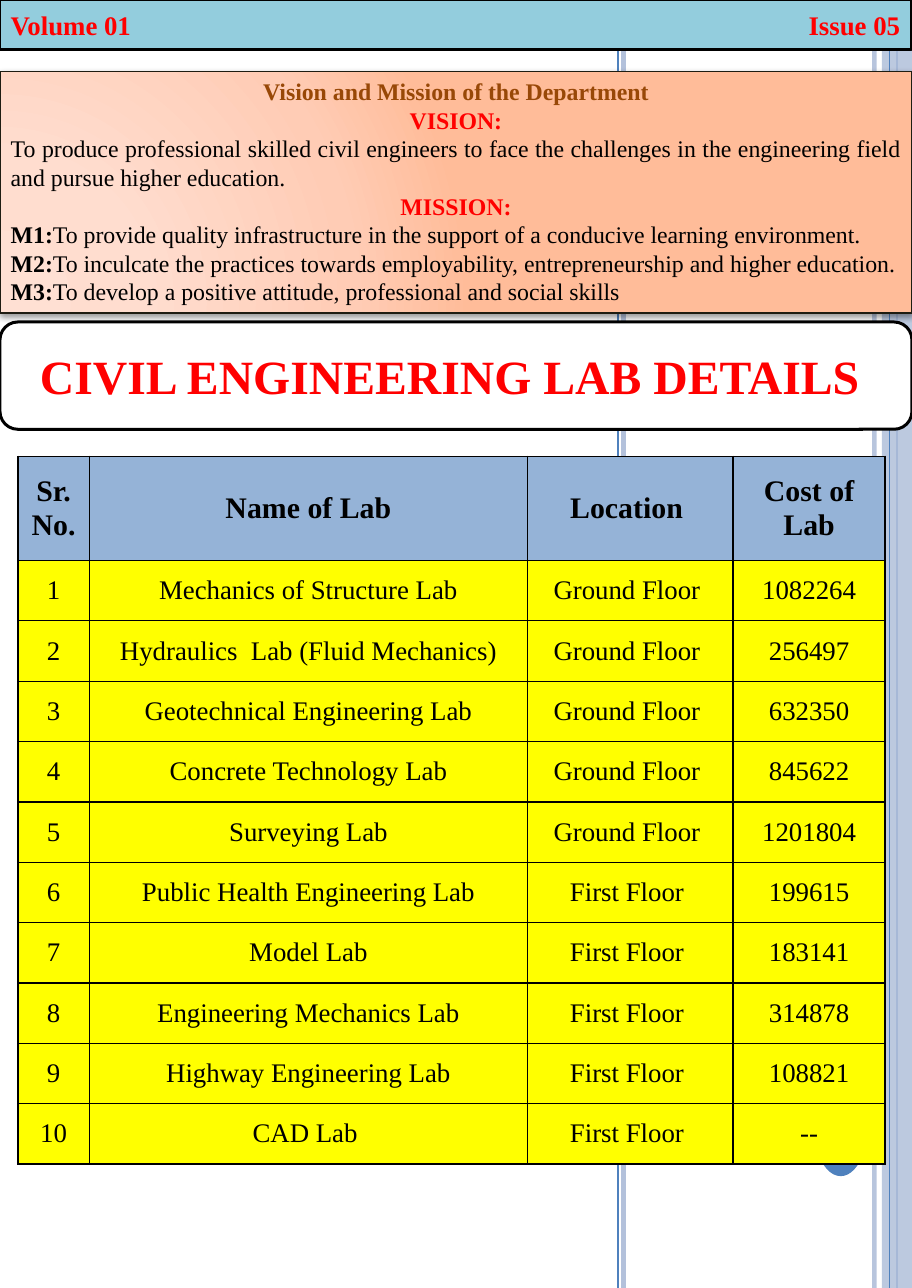
from dataclasses import dataclass

from lxml import etree
from pptx import Presentation
from pptx import util as u
from pptx.dml.color import RGBColor
from pptx.enum import shapes, text
from pptx.oxml import ns

WIDTH, HEIGHT = 612, 864
CENTER, JUSTIFY, LEFT = text.PP_ALIGN.CENTER, text.PP_ALIGN.JUSTIFY, text.PP_ALIGN.LEFT
MIDDLE, TOP = text.MSO_ANCHOR.MIDDLE, text.MSO_ANCHOR.TOP


@dataclass(frozen=True)
class Theme:
    font: str = "Times New Roman"
    black: str = "000000"
    white: str = "FFFFFF"
    red: str = "FF0000"
    brown: str = "984807"
    blue: str = "4F81BD"
    pale_blue: str = "B3C1DB"
    banner: str = "93CDDD"
    panel_line: str = "1E1C11"
    title_outline: str = "5E457C"
    head_fill: str = "95B3D7"
    row_fill: str = "FFFF00"
    panel_stops: tuple = ((0, "FFE0D3"), (30, "FFDDCF"), (75, "FFCCB5"), (100, "FFBC99"))
    body_size: int = 16
    row_size: int = 18
    head_size: int = 20
    title_size: int = 32


def add_xml(parent, tag, **attributes):
    """Append a DrawingML element and return it."""
    names = {key: str(value) for key, value in attributes.items()}
    return etree.SubElement(parent, ns.qn("a:" + tag), names)


def add_solid(parent, color):
    add_xml(add_xml(parent, "solidFill"), "srgbClr", val=color)


def add_span(para, content, font, size, color, bold=False, outline=None):
    """Add one formatted run to a paragraph."""
    span = para.add_run()
    span.text = content
    span.font.name, span.font.size, span.font.bold = font, u.Pt(size), bold
    span.font.color.rgb = RGBColor.from_string(color)
    if outline:
        properties = span._r.get_or_add_rPr()
        line = add_xml(properties, "ln", w=u.Pt(0.71))
        add_solid(line, outline)
        properties.insert(0, line)
    return span


class Page:
    def __init__(self, slide, theme):
        self.slide, self.theme = slide, theme

    def place(self, box, left, top, width, height):
        box.left, box.top = u.Pt(left), u.Pt(top)
        box.width, box.height = u.Pt(width), u.Pt(height)

    def set_alpha(self, element, percent):
        color = element.find(".//" + ns.qn("a:srgbClr"))
        add_xml(color, "alpha", val=percent * 1000)

    def rule(self, x, color, weight, alpha=100):
        """Full-height vertical line."""
        line = self.slide.shapes.add_connector(
            shapes.MSO_CONNECTOR.STRAIGHT, u.Pt(x), u.Pt(0), u.Pt(x), u.Pt(HEIGHT))
        line.line.color.rgb = RGBColor.from_string(color)
        line.line.width = u.Pt(weight)
        properties = line.element.spPr
        if alpha < 100:
            self.set_alpha(properties, alpha)
        add_xml(properties, "effectLst")

    def shape(self, kind, frame, fill, line=None, alpha=100):
        box = self.slide.shapes.add_shape(kind, *map(u.Pt, frame))
        box.shadow.inherit = False
        box.fill.solid()
        box.fill.fore_color.rgb = RGBColor.from_string(fill)
        if alpha < 100:
            self.set_alpha(box.element.spPr, alpha)
        if line:
            box.line.color.rgb = RGBColor.from_string(line)
            box.line.width = u.Pt(2)
        else:
            box.line.fill.background()
        return box

    def set_text(self, frame, paragraphs, anchor=MIDDLE):
        """Fill a text frame from (alignment, [(text, format), ...]) pairs."""
        frame.word_wrap, frame.vertical_anchor = True, anchor
        for index, (align, spans) in enumerate(paragraphs):
            para = frame.add_paragraph() if index else frame.paragraphs[0]
            para.alignment = align
            para.space_before = u.Pt(0)
            for content, style in spans:
                add_span(para, content, **{"font": self.theme.font, **style})

    def placeholder(self, index, frame, paragraphs, anchor):
        """Use a template placeholder, above everything drawn so far."""
        box = self.slide.placeholders[index]
        self.place(box, *frame)
        box.element.getparent().append(box.element)
        self.set_text(box.text_frame, paragraphs, anchor)
        box.text_frame.auto_size = text.MSO_AUTO_SIZE.NONE
        for para in box.text_frame.paragraphs:
            properties = para._p.get_or_add_pPr()
            properties.set("marL", "0")
            properties.set("indent", "0")
            add_xml(properties, "buNone")
        return box

    def panel(self, box):
        """Radial gradient, thin line and soft shadow."""
        properties = box.element.spPr
        add_xml(add_xml(properties, "prstGeom", prst="rect"), "avLst")
        gradient = add_xml(properties, "gradFill", rotWithShape=1)
        stops = add_xml(gradient, "gsLst")
        for position, color in self.theme.panel_stops:
            add_xml(add_xml(stops, "gs", pos=position * 1000), "srgbClr", val=color)
        circle = add_xml(gradient, "path", path="circle")
        add_xml(circle, "fillToRect", l=5000, t=100000, r=120000, b=10000)
        box.line.color.rgb = RGBColor.from_string(self.theme.panel_line)
        box.line.width = u.Pt(1)
        shadow = add_xml(add_xml(properties, "effectLst"), "outerShdw", blurRad=u.Pt(4),
                         dist=u.Pt(2), dir=90 * 60000, rotWithShape=0)
        add_xml(add_xml(shadow, "srgbClr", val=self.theme.black), "alpha", val=40000)

    def table(self, left, top, widths, heights, rows):
        theme = self.theme
        grid = self.slide.shapes.add_table(
            len(rows), len(widths), u.Pt(left), u.Pt(top),
            u.Pt(sum(widths)), u.Pt(sum(heights))).table
        grid.horz_banding = grid.first_row = False
        for column, width in zip(grid.columns, widths):
            column.width = u.Pt(width)
        for r, (values, height) in enumerate(zip(rows, heights)):
            grid.rows[r].height = u.Pt(height)
            style = dict(size=theme.row_size if r else theme.head_size,
                         color=theme.black, bold=r == 0)
            for c, value in enumerate(values):
                cell = grid.cell(r, c)
                self.set_text(cell.text_frame, [(CENTER, [(value, style)])])
                cell.vertical_anchor = MIDDLE
                properties = cell._tc.get_or_add_tcPr()
                for side in ("lnL", "lnR", "lnT", "lnB"):
                    add_solid(add_xml(properties, side, w=u.Pt(1)), theme.black)
                cell.fill.solid()
                cell.fill.fore_color.rgb = RGBColor.from_string(
                    theme.row_fill if r else theme.head_fill)


def main():
    theme = Theme()
    deck = Presentation()
    deck.slide_width, deck.slide_height = u.Pt(WIDTH), u.Pt(HEIGHT)
    page = Page(deck.slides.add_slide(deck.slide_layouts[1]), theme)
    kinds = shapes.MSO_SHAPE

    # Background stripes and dot
    page.rule(586.8, theme.pale_blue, 3, alpha=93)
    page.rule(418.3, theme.pale_blue, 3)
    page.rule(414.7, theme.blue, 1)
    page.rule(601.9, theme.blue, 1.5)
    page.shape(kinds.RECTANGLE, (591.8, 0, 20.2, HEIGHT), theme.pale_blue, alpha=87)
    page.rule(596.9, theme.blue, 0.75)
    page.shape(kinds.OVAL, (545.8, 720, 36.7, 69), theme.blue)

    # Volume and issue banner, issue set on a right tab
    banner = page.shape(kinds.RECTANGLE, (0, 0, WIDTH, 33), theme.banner, theme.black)
    issue = dict(size=theme.row_size, color=theme.red, bold=True)
    page.set_text(banner.text_frame, [(LEFT, [("Volume 01\tIssue 05", issue)])])
    tabs = add_xml(banner.text_frame.paragraphs[0]._p.get_or_add_pPr(), "tabLst")
    add_xml(tabs, "tab", pos=u.Pt(597), algn="r")

    # Vision and mission
    plain = dict(size=theme.body_size, color=theme.black)
    strong = {**plain, "bold": True}
    heading = {**strong, "color": theme.red}
    missions = (
        "To provide quality infrastructure in the support of a conducive learning environment.",
        "To inculcate the practices towards employability, entrepreneurship and higher education.",
        "To develop a positive attitude, professional and social skills",
    )
    vision = page.placeholder(1, (0, 48, WIDTH, 162), [
        (CENTER, [("Vision and Mission of the Department", {**strong, "color": theme.brown})]),
        (CENTER, [("VISION:", heading)]),
        (JUSTIFY, [("To produce professional skilled civil engineers to face the challenges "
                    "in the engineering field and pursue higher education.", plain)]),
        (CENTER, [("MISSION:", heading)]),
        *((JUSTIFY, [(f"M{number}:", strong), (mission, plain)])
          for number, mission in enumerate(missions, 1)),
    ], TOP)
    page.panel(vision)

    # Title
    title_frame = (0, 216, WIDTH, 72)
    page.shape(kinds.ROUNDED_RECTANGLE, title_frame, theme.white, theme.black)
    page.placeholder(0, title_frame, [(CENTER, [("CIVIL ENGINEERING LAB DETAILS ", dict(
        size=theme.title_size, color=theme.red, bold=True,
        outline=theme.title_outline))])], MIDDLE)

    # Lab table: the first five labs are on the ground floor
    labs = (
        ("Mechanics of Structure Lab", "1082264"),
        ("Hydraulics  Lab (Fluid Mechanics)", "256497"),
        ("Geotechnical Engineering Lab", "632350"),
        ("Concrete Technology Lab", "845622"),
        ("Surveying Lab", "1201804"),
        ("Public Health Engineering Lab", "199615"),
        ("Model Lab", "183141"),
        ("Engineering Mechanics Lab", "314878"),
        ("Highway Engineering Lab", "108821"),
        ("CAD Lab ", "--"),
    )
    rows = [("Sr. No.", "Name of Lab", "Location ", "Cost of Lab")]
    for number, (name, cost) in enumerate(labs, 1):
        floor = "Ground Floor " if number <= 5 else "First Floor "
        rows.append((str(number), name, floor, cost))
    page.table(12, 306, (48, 294, 138, 102), [70] + [40.5] * len(labs), rows)

    deck.save("out.pptx")


if __name__ == "__main__":
    main()
